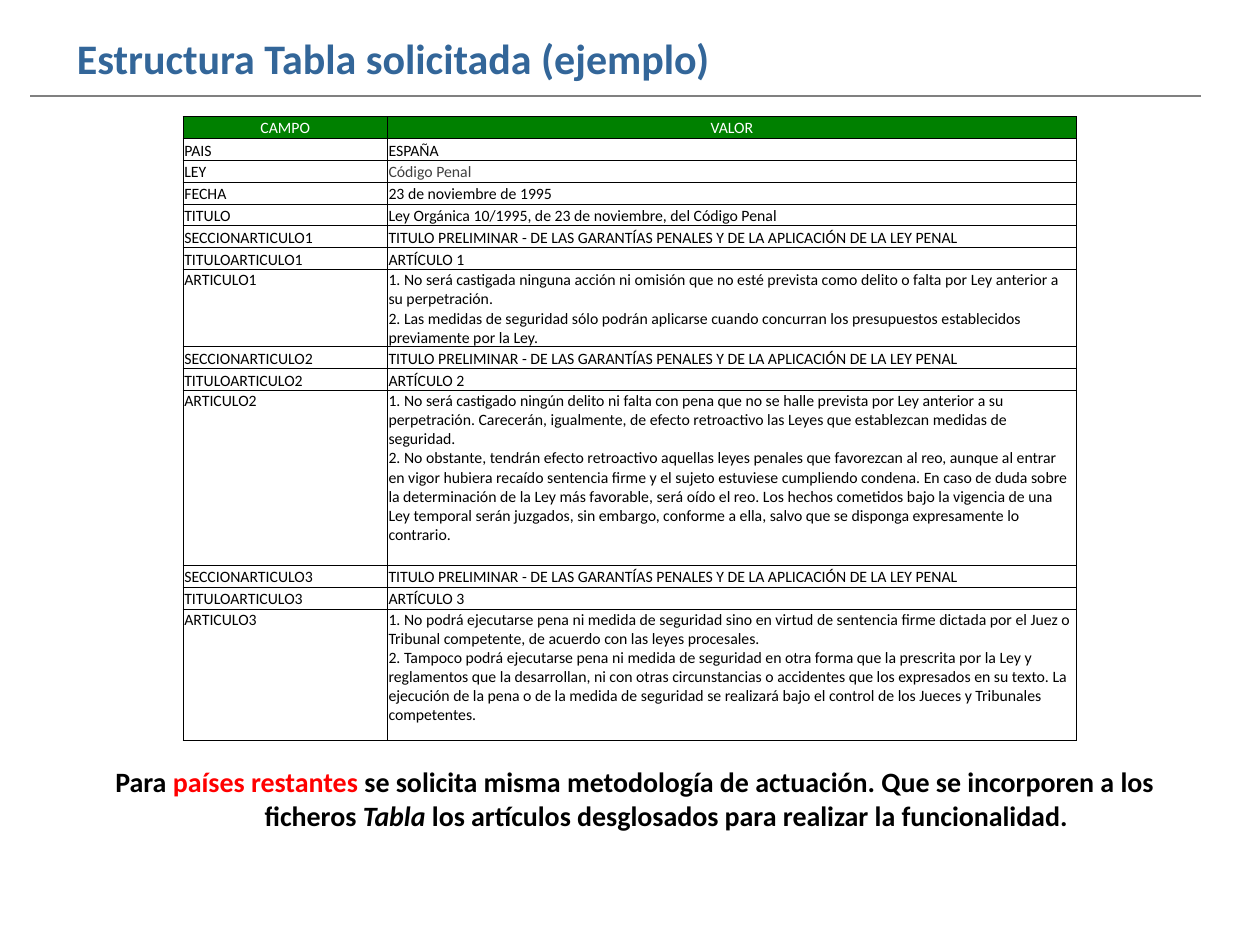
from copy import deepcopy

from lxml import etree
from pptx import Presentation
from pptx import util as u
from pptx.dml.color import RGBColor
from pptx.enum import shapes, text
from pptx.oxml import ns

COLORS = {
    "title": "336699",
    "rule": "808080",
    "header": "008000",
    "white": "FFFFFF",
    "black": "000000",
    "gray": "404040",
    "accent": "FF0000",
}
ROW_HEIGHT = 12.5
PRELIMINARY = "TITULO PRELIMINAR - DE LAS GARANTÍAS PENALES Y DE LA APLICACIÓN DE LA LEY PENAL"
LAW_FIELDS = [
    ("PAIS", "ESPAÑA"),
    ("LEY", "Código Penal"),
    ("FECHA", "23 de noviembre de 1995"),
    ("TITULO", "Ley Orgánica 10/1995, de 23 de noviembre, del Código Penal"),
]
ARTICLES = [
    (44, "1. No será castigada ninguna acción ni omisión que no esté prevista como delito o falta "
         "por Ley anterior a su perpetración.\v"
         "2. Las medidas de seguridad sólo podrán aplicarse cuando concurran los presupuestos "
         "establecidos previamente por la Ley."),
    (100, "1. No será castigado ningún delito ni falta con pena que no se halle prevista por Ley "
          "anterior a su perpetración. Carecerán, igualmente, de efecto retroactivo las Leyes que "
          "establezcan medidas de seguridad.\v"
          "2. No obstante, tendrán efecto retroactivo aquellas leyes penales que favorezcan al reo, "
          "aunque al entrar en vigor hubiera recaído sentencia firme y el sujeto estuviese cumpliendo "
          "condena. En caso de duda sobre la determinación de la Ley más favorable, será oído el reo. "
          "Los hechos cometidos bajo la vigencia de una Ley temporal serán juzgados, sin embargo, "
          "conforme a ella, salvo que se disponga expresamente lo contrario."),
    (75, "1. No podrá ejecutarse pena ni medida de seguridad sino en virtud de sentencia firme dictada "
         "por el Juez o Tribunal competente, de acuerdo con las leyes procesales.\v"
         "2. Tampoco podrá ejecutarse pena ni medida de seguridad en otra forma que la prescrita por la "
         "Ley y reglamentos que la desarrollan, ni con otras circunstancias o accidentes que los "
         "expresados en su texto. La ejecución de la pena o de la medida de seguridad se realizará "
         "bajo el control de los Jueces y Tribunales competentes."),
]
CLOSING = [
    ("Para ", {}),
    ("países restantes ", {"color": "accent"}),
    ("se solicita misma metodología de actuación. Que se incorporen a los ficheros ", {}),
    ("Tabla ", {"italic": True}),
    ("los artículos desglosados para realizar la funcionalidad.", {}),
]


def rgb(color):
    return RGBColor.from_string(COLORS[color])


def apply(target, values):
    for attribute, value in values.items():
        setattr(target, attribute, value)


class SlideBuilder:
    font_name = "Calibri"

    def __init__(self, slide):
        self.slide = slide

    def format_run(self, run, size, color="black", bold=False, italic=False):
        apply(run.font, {"name": self.font_name, "size": u.Pt(size), "bold": bold, "italic": italic})
        run.font.color.rgb = rgb(color)

    def frame(self, shape):
        apply(shape.text_frame, {
            "word_wrap": True,
            "auto_size": text.MSO_AUTO_SIZE.SHAPE_TO_FIT_TEXT,
            "vertical_anchor": text.MSO_ANCHOR.TOP,
            "margin_left": u.Pt(7.2), "margin_right": u.Pt(7.2),
            "margin_top": u.Pt(3.6), "margin_bottom": u.Pt(3.6),
        })
        return shape.text_frame.paragraphs[0]

    def title(self, wording, left, top, width, height):
        heading = self.slide.shapes.title
        apply(heading, {"left": u.Pt(left), "top": u.Pt(top),
                        "width": u.Pt(width), "height": u.Pt(height)})
        line = self.frame(heading)
        line.alignment = text.PP_ALIGN.LEFT
        run = line.add_run()
        run.text = wording
        self.format_run(run, 24, "title", bold=True)

    def rule(self, left, right, y):
        divider = self.slide.shapes.add_connector(
            shapes.MSO_CONNECTOR.STRAIGHT, u.Pt(left), u.Pt(y), u.Pt(right), u.Pt(y))
        divider.line.color.rgb = rgb("rule")
        divider.line.width = u.Pt(0.75)
        etree.SubElement(divider._element.spPr, ns.qn("a:effectLst"))

    def paragraph(self, pieces, left, top, width, height, hanging):
        box = self.slide.shapes.add_textbox(u.Pt(left), u.Pt(top), u.Pt(width), u.Pt(height))
        line = self.frame(box)
        line.alignment = text.PP_ALIGN.CENTER
        properties = line._p.get_or_add_pPr()
        properties.set("marL", str(u.Pt(hanging)))
        properties.set("indent", str(-u.Pt(hanging)))
        for wording, style in pieces:
            run = line.add_run()
            run.text = wording
            self.format_run(run, 16, bold=True, **style)

    def borders(self, cell):
        properties = cell._tc.get_or_add_tcPr()
        for side in ("lnL", "lnR", "lnT", "lnB"):
            edge = etree.SubElement(properties, ns.qn(f"a:{side}"), w=str(u.Pt(0.5)))
            fill = etree.SubElement(edge, ns.qn("a:solidFill"))
            etree.SubElement(fill, ns.qn("a:srgbClr"), val=COLORS["black"])

    def cell(self, cell, wording, anchor, color, header):
        cell.text = wording
        apply(cell, {"vertical_anchor": anchor, "margin_left": u.Pt(0.75), "margin_right": u.Pt(0.75),
                     "margin_top": u.Pt(0.75), "margin_bottom": 0})
        line = cell.text_frame.paragraphs[0]
        line.alignment = text.PP_ALIGN.CENTER if header else text.PP_ALIGN.LEFT
        for run in line.runs:
            self.format_run(run, 9, color)
        for line_break in line._p.findall(ns.qn("a:br")):
            line_break.insert(0, deepcopy(line.runs[0]._r.rPr))
        self.borders(cell)
        if header:
            cell.fill.solid()
            cell.fill.fore_color.rgb = rgb("header")
        else:
            cell.fill.background()

    def table(self, rows, left, top, widths):
        height = sum(row_height for row_height, _ in rows)
        grid = self.slide.shapes.add_table(
            len(rows), len(widths), u.Pt(left), u.Pt(top), u.Pt(sum(widths)), u.Pt(height)).table
        apply(grid, {"first_row": False, "horz_banding": False})
        for column, width in zip(grid.columns, widths):
            column.width = u.Pt(width)
        for index, (row_height, values) in enumerate(rows):
            grid.rows[index].height = u.Pt(row_height)
            header = index == 0
            if header:
                anchor = text.MSO_ANCHOR.MIDDLE
            else:
                anchor = text.MSO_ANCHOR.BOTTOM if row_height == ROW_HEIGHT else text.MSO_ANCHOR.TOP
            for column, wording in enumerate(values):
                color = "white" if header else "gray" if wording == "Código Penal" else "black"
                self.cell(grid.cell(index, column), wording, anchor, color, header)


def law_rows():
    rows = [(ROW_HEIGHT, pair) for pair in [("CAMPO", "VALOR"), *LAW_FIELDS]]
    for number, (height, wording) in enumerate(ARTICLES, 1):
        rows += [
            (ROW_HEIGHT, (f"SECCIONARTICULO{number}", PRELIMINARY)),
            (ROW_HEIGHT, (f"TITULOARTICULO{number}", f"ARTÍCULO {number}")),
            (height, (f"ARTICULO{number}", wording)),
        ]
    return rows


def main():
    deck = Presentation()
    apply(deck, {"slide_width": u.Pt(720), "slide_height": u.Pt(540)})
    builder = SlideBuilder(deck.slides.add_slide(deck.slide_layouts[5]))
    builder.rule(17.3, 686.2, 54.9)
    builder.title("Estructura Tabla solicitada (ejemplo)", 36.7, 15.2, 665.3, 36.4)
    builder.paragraph(CLOSING, 48.2, 433.5, 629.3, 46, hanging=36)
    builder.table(law_rows(), 104.6, 66.7, (116.7, 393.9))
    deck.save("out.pptx")


if __name__ == "__main__":
    main()
